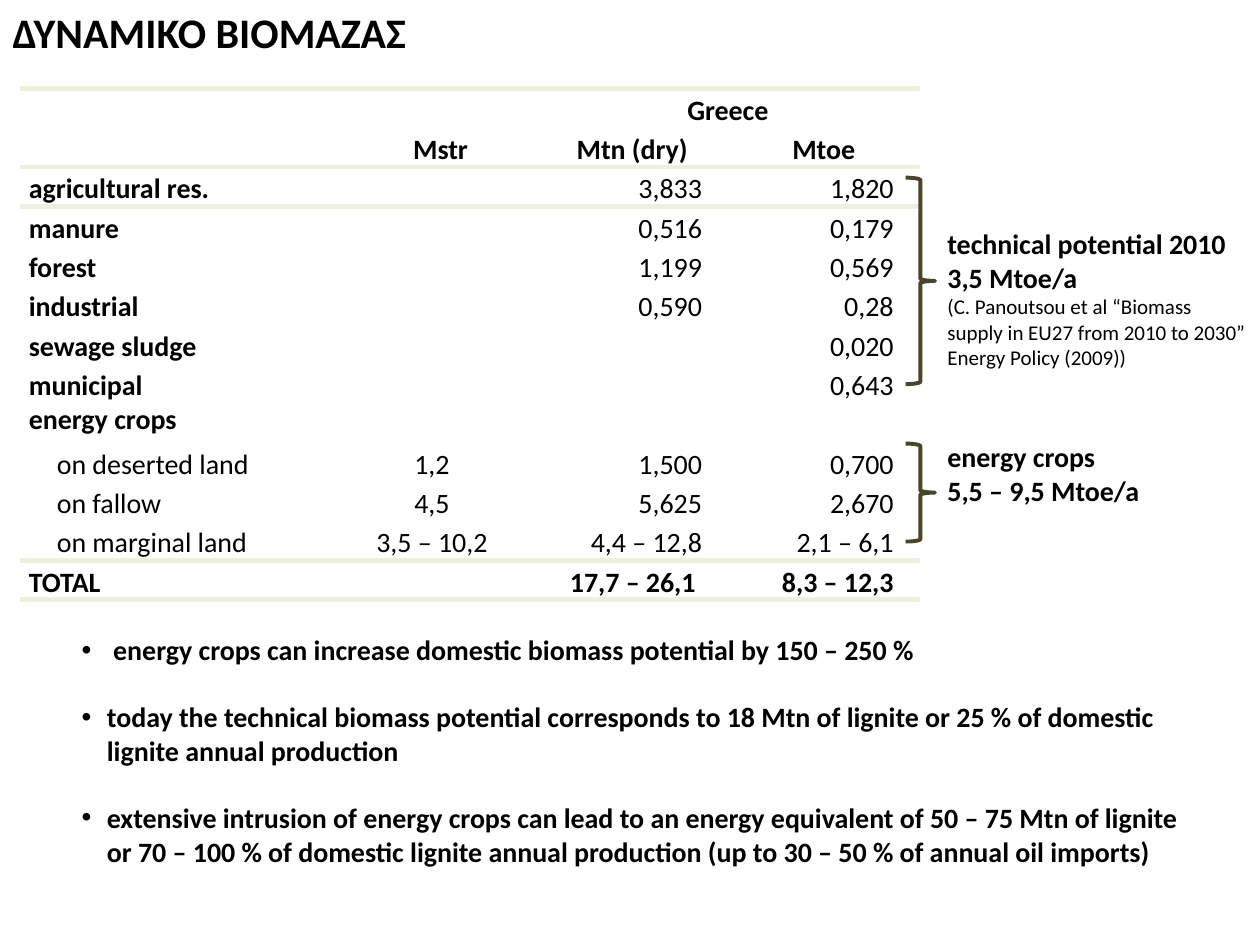
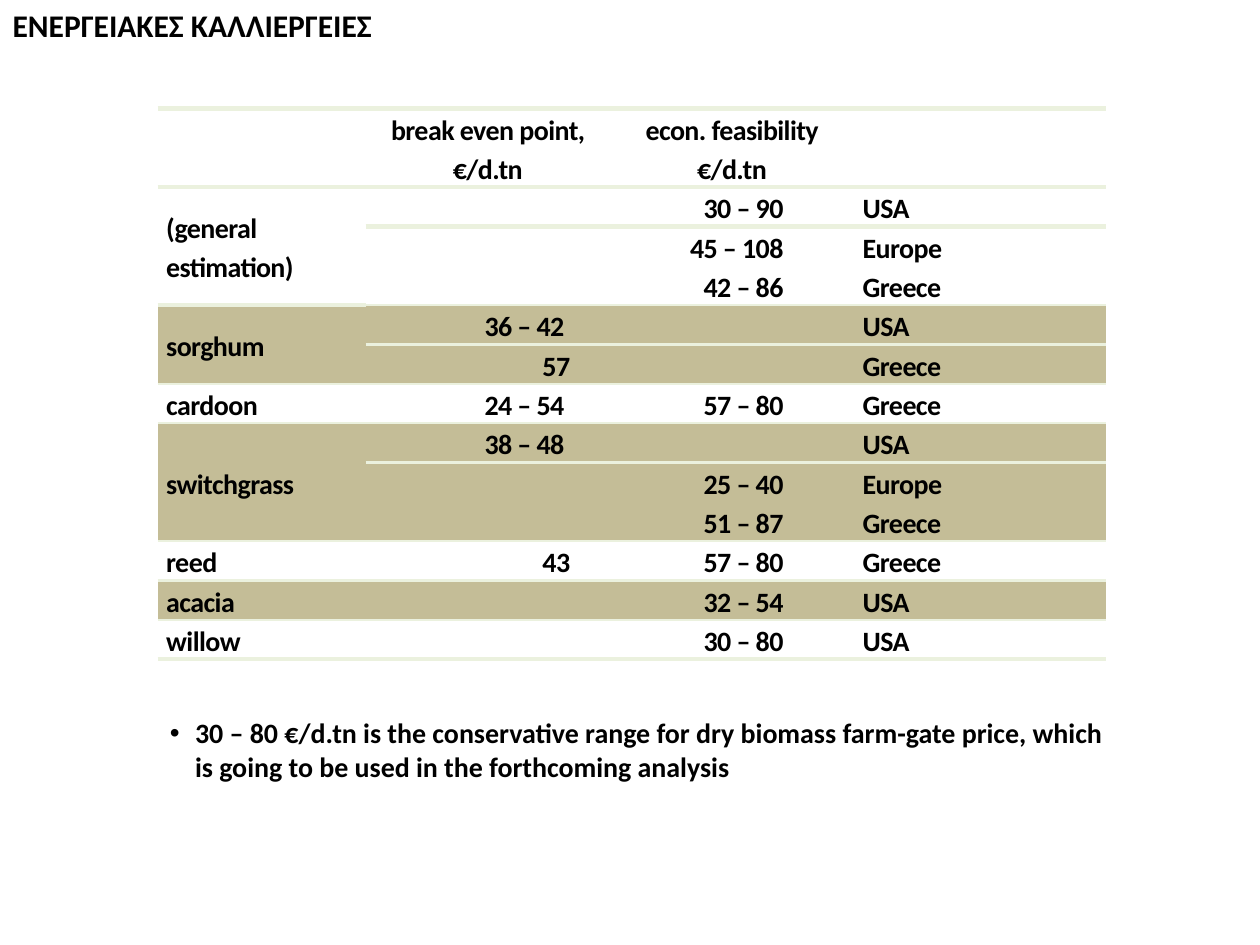
from lxml.etree import SubElement
from pptx import Presentation
from pptx.dml.color import RGBColor
from pptx.enum.shapes import MSO_SHAPE
from pptx.enum.text import MSO_ANCHOR, MSO_AUTO_SIZE, PP_ALIGN
from pptx.oxml import parse_xml
from pptx.oxml.ns import nsdecls, qn
from pptx.util import Pt

BLACK = RGBColor(0x00, 0x00, 0x00)
RULE = RGBColor(0xEB, 0xF1, 0xDE)
BAND = RGBColor(0xC4, 0xBD, 0x97)
BRACE = RGBColor(0x4A, 0x45, 0x2A)
FONT = "Calibri"
BODY = 16
ROW_HEIGHT = 22.5
LINE_SPACING = 1.15
PLAIN_TABLE = "{2D5ABB26-0587-4C30-8999-92F81FD0307C}"
LEFT, CENTER, RIGHT, JUSTIFY = PP_ALIGN.LEFT, PP_ALIGN.CENTER, PP_ALIGN.RIGHT, PP_ALIGN.JUSTIFY


class Slides:
    """Holds the deck, its text style and the current page."""

    def __init__(self):
        self.deck = Presentation()
        self.deck.slide_width, self.deck.slide_height = Pt(720), Pt(540)
        self.page = None

    def style(self, para, size=BODY, bold=True, tracking=0):
        font = para.font
        font.name, font.size, font.bold = FONT, Pt(size), bold
        font.color.rgb = BLACK
        if tracking:
            para._p.pPr.find(qn("a:defRPr")).set("spc", str(tracking))

    def add_page(self, title, size, height):
        self.page = self.deck.slides.add_slide(self.deck.slide_layouts[5])
        box = self.page.shapes.title
        box.left, box.top, box.width, box.height = Pt(0), Pt(0), Pt(720), Pt(height)
        frame = box.text_frame
        frame.text = title
        frame.word_wrap = True
        frame.auto_size = MSO_AUTO_SIZE.SHAPE_TO_FIT_TEXT
        frame.vertical_anchor = MSO_ANCHOR.TOP
        frame.paragraphs[0].alignment = LEFT
        self.style(frame.paragraphs[0], size)

    def add_text(self, left, top, width, height, lines, bullet=False, gap=0):
        """Lines are (text, size, bold) tuples, one paragraph each."""
        box = self.page.shapes.add_textbox(Pt(left), Pt(top), Pt(width), Pt(height))
        frame = box.text_frame
        frame.word_wrap = True
        frame.auto_size = MSO_AUTO_SIZE.SHAPE_TO_FIT_TEXT
        for index, (text, size, bold) in enumerate(lines):
            para = frame.paragraphs[0] if index == 0 else frame.add_paragraph()
            para.text = text
            if bullet:
                props = para._p.get_or_add_pPr()
                props.set("marL", str(Pt(14.4)))
                props.set("indent", str(-Pt(14.4)))
                SubElement(props, qn("a:buFont")).set("typeface", "Arial")
                SubElement(props, qn("a:buChar")).set("char", "•")
            if index and gap:
                para.space_before = Pt(gap)
            self.style(para, size, bold)

    def add_bullets(self, left, top, width, height, texts, gap=0):
        self.add_text(left, top, width, height, [(text, BODY, True) for text in texts], True, gap)

    def add_brace(self, top, height):
        brace = self.page.shapes.add_shape(
            MSO_SHAPE.RIGHT_BRACE, Pt(517.5), Pt(top), Pt(16.8), Pt(height))
        brace.shadow.inherit = False
        brace.fill.background()
        brace.line.color.rgb = BRACE
        brace.line.width = Pt(2.25)

    def add_table(self, left, top, widths, heights):
        frame = self.page.shapes.add_table(
            len(heights), len(widths), Pt(left), Pt(top), Pt(sum(widths)), Pt(sum(heights)))
        table = frame.table
        table.first_row = table.horz_banding = False
        table._tbl.tblPr.find(qn("a:tableStyleId")).text = PLAIN_TABLE
        for column, width in zip(table.columns, widths):
            column.width = Pt(width)
        for row, height in zip(table.rows, heights):
            row.height = Pt(height)
        for cell in table.iter_cells():
            cell.margin_left = cell.margin_right = Pt(5)
            cell.margin_top = cell.margin_bottom = Pt(0)
            cell.fill.background()
            self.style(cell.text_frame.paragraphs[0])
        return table

    def write_cell(self, cell, text, align, bold=True, before=0, after=0,
                   spacing=LINE_SPACING, tracking=0):
        cell.text = text
        para = cell.text_frame.paragraphs[0]
        para.alignment = align
        para.line_spacing = spacing
        props = para._p.get_or_add_pPr()
        props.set("marL", str(Pt(before)))
        props.set("marR", str(Pt(after)))
        self.style(para, BODY, bold, tracking)

    def rule_rows(self, table, rules):
        """Rules map the line above row n to a width in points."""
        for index, row in enumerate(table.rows):
            for cell in row.cells:
                edges = [("lnT", rules.get(index)), ("lnB", rules.get(index + 1))]
                drawn = [(tag, width) for tag, width in edges if width]
                for place, (tag, width) in enumerate(drawn):
                    cell._tc.get_or_add_tcPr().insert(place, parse_xml(
                        f'<a:{tag} {nsdecls("a")} w="{Pt(width)}"><a:solidFill>'
                        f'<a:srgbClr val="{RULE}"/></a:solidFill></a:{tag}>'))


def build_potential(slides):
    slides.add_page("ΔΥΝΑΜΙΚΟ ΒΙΟΜΑΖΑΣ", 24, 36)

    # Biomass table
    residues = [
        ("agricultural res.", "", "3,833", "1,820"),
        ("manure", "", "0,516", "0,179"),
        ("forest", "", "1,199", "0,569"),
        ("industrial", "", "0,590", "0,28"),
        ("sewage sludge", "", "", "0,020"),
        ("municipal", "", "", "0,643"),
        ("energy crops", "", "", ""),
    ]
    crops = [
        ("on deserted land", "1,2", "1,500", "0,700"),
        ("on fallow", "4,5", "5,625", "2,670"),
        ("on marginal land", "3,5 – 10,2", "4,4 – 12,8", "2,1 – 6,1"),
    ]
    total = ("TOTAL", "", "17,7 – 26,1 ", "8,3 – 12,3")
    rows = residues + crops + [total]
    table = slides.add_table(11.5, 50.5, [185.5, 109.5, 109.5, 109.5], [ROW_HEIGHT] * 13)
    table.cell(0, 2).merge(table.cell(0, 3))
    slides.write_cell(table.cell(0, 2), "Greece", CENTER)
    for column, unit in enumerate(["Mstr", "Mtn (dry)", "Mtoe"], 1):
        slides.write_cell(table.cell(1, column), unit, CENTER)
    for index, row in enumerate(rows, 2):
        label, *values = row
        spacing = 1.0 if label == "energy crops" else LINE_SPACING
        slides.write_cell(table.cell(index, 0), label, JUSTIFY, row not in crops,
                          before=16 if row in crops else 0, spacing=spacing)
        for column, value in enumerate(values, 1):
            if value:
                slides.write_cell(table.cell(index, column), value,
                                  CENTER if column == 1 else RIGHT, row is total, after=9.8)
    slides.rule_rows(table, {0: 3, 2: 3, 12: 3, 13: 3})

    # Braces and their notes
    slides.add_brace(101.5, 118)
    slides.add_brace(253.5, 56)
    slides.add_text(534.3, 126, 185.7, 90, [
        ("technical potential 2010", BODY, True),
        ("3,5 Mtoe/a", BODY, True),
        ("(C. Panoutsou et al “Biomass supply in EU27 from 2010 to 2030” Energy Policy (2009))",
         12, False),
    ])
    slides.add_text(534.3, 247.7, 185.7, 46, [
        ("energy crops", BODY, True), ("5,5 – 9,5 Mtoe/a", BODY, True)])

    # Conclusions
    slides.add_bullets(39.6, 358, 652.4, 143.3, [
        " energy crops can increase domestic biomass potential by 150 – 250 %",
        "today the technical biomass potential corresponds to 18 Mtn of lignite or 25 % of "
        "domestic lignite annual production",
        "extensive intrusion of energy crops can lead to an energy equivalent of 50 – 75 Mtn of "
        "lignite or 70 – 100 % of domestic lignite annual production (up to 30 – 50 % of annual "
        "oil imports)",
    ], gap=19.2)


def build_crops(slides):
    slides.add_page("ΕΝΕΡΓΕΙΑΚΕΣ ΚΑΛΛΙΕΡΓΕΙΕΣ", 18, 29)

    # Price table, one group of rows for each crop
    groups = [
        ("(general estimation)", [("", "30 – 90 ", "USA"), ("", "45 – 108 ", "Europe"),
                                  ("", "42 – 86 ", "Greece")]),
        ("sorghum", [("36 – 42 ", "", "USA"), ("57", "", "Greece")]),
        ("cardoon", [("24 – 54 ", "57 – 80 ", "Greece")]),
        ("switchgrass", [("38 – 48 ", "", "USA"), ("", "25 – 40 ", "Europe"),
                         ("", "51 – 87 ", "Greece")]),
        ("reed", [("43", "57 – 80 ", "Greece")]),
        ("acacia", [("", "32 – 54 ", "USA")]),
        ("willow", [("", "30 – 80 ", "USA")]),
    ]
    formats = [(RIGHT, 17.7), (RIGHT, 32), (JUSTIFY, 0)]
    table = slides.add_table(90, 61.9, [119, 139.5, 139.5, 144],
                             [2 * ROW_HEIGHT] + [ROW_HEIGHT] * 12)
    for column, heading in enumerate(["break even point, €/d.tn", "econ. feasibility €/d.tn"], 1):
        slides.write_cell(table.cell(0, column), heading, CENTER, tracking=-30)
    rules = {0: 3, 1: 3}
    first = 1
    for number, (crop, prices) in enumerate(groups):
        end = first + len(prices)
        label = table.cell(first, 0)
        if len(prices) > 1:
            label.merge(table.cell(end - 1, 0))
        slides.write_cell(label, crop, LEFT, tracking=-30)
        label.vertical_anchor = MSO_ANCHOR.MIDDLE
        for index, values in enumerate(prices, first):
            for column, (value, (align, after)) in enumerate(zip(values, formats), 1):
                if value:
                    slides.write_cell(table.cell(index, column), value, align,
                                      after=after, tracking=-30)
            if number % 2:
                for cell in table.rows[index].cells:
                    cell.fill.solid()
                    cell.fill.fore_color.rgb = BAND
        rules[end] = 1.5 if number < len(groups) - 1 else 3
        first = end
    slides.rule_rows(table, rules)

    # Conclusion
    slides.add_bullets(90, 405.5, 551.5, 46, [
        "30 – 80 €/d.tn is the conservative range for dry biomass farm-gate price, which is "
        "going to be used in the forthcoming analysis"])


def main():
    slides = Slides()
    build_potential(slides)
    build_crops(slides)
    slides.deck.save("out.pptx")


if __name__ == "__main__":
    main()
